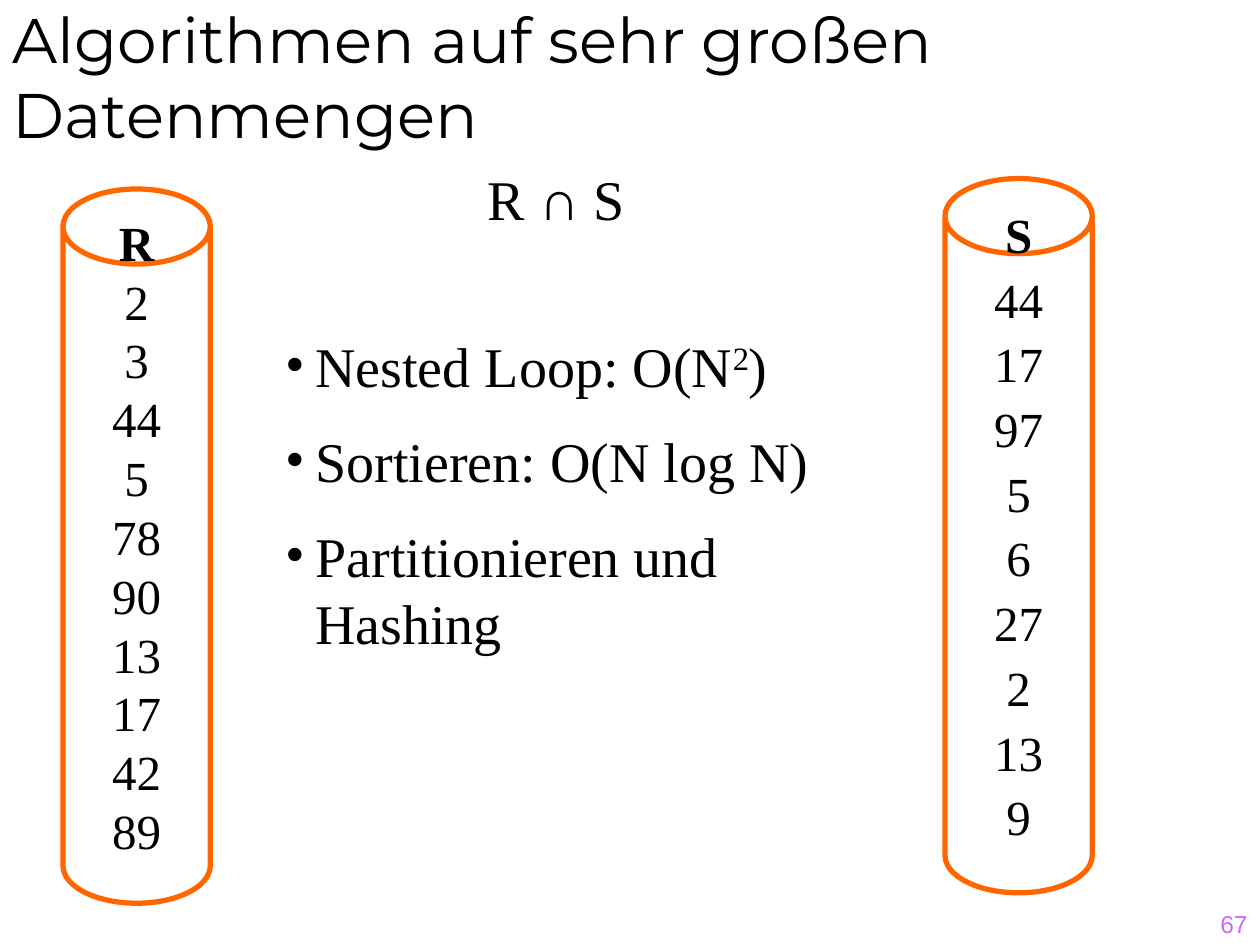
from lxml.etree import SubElement
from pptx import Presentation
from pptx.dml.color import RGBColor
from pptx.enum.shapes import MSO_SHAPE
from pptx.enum.text import MSO_ANCHOR, MSO_AUTO_SIZE, PP_ALIGN
from pptx.oxml.ns import qn
from pptx.util import Cm, Pt

# Content
TITLE = "Algorithmen auf sehr großen Datenmengen"
OPERATION = "R ∩ S"
PAGE_NUMBER = "67"
# name, values, left, top, line spacing, room kept free below the values
RELATIONS = [
    ("R", [2, 3, 44, 5, 78, 90, 13, 17, 42, 89], 1.27, 3.81, 1.0, 1.3),
    ("S", [44, 17, 97, 5, 6, 27, 2, 13, 9], 19.05, 3.6, 1.1, 1.43),
]
# Each method is a list of (text, is superscript)
METHODS = [
    [("Nested Loop: O(N", False), ("2", True), (")", False)],
    [("Sortieren: O(N log N)", False)],
    [("Partitionieren und Hashing", False)],
]
SERIF = "Times New Roman"
BLACK, WHITE, ORANGE, VIOLET = "000000", "FFFFFF", "FF6600", "CC66FF"


def color(hex_code):
    return RGBColor.from_string(hex_code)


def add_text(paragraph, text, font=SERIF, size=32, hex_code=BLACK,
             bold=False, superscript=False, align=None):
    if align is not None:
        paragraph.alignment = align
    run = paragraph.add_run()
    run.text = text
    run.font.name = font
    run.font.size = Pt(size)
    run.font.bold = bold
    run.font.color.rgb = color(hex_code)
    if superscript:
        run.font._element.set("baseline", "30000")


def add_bullet(paragraph, indent):
    properties = paragraph._p.get_or_add_pPr()
    properties.set("marL", str(indent))
    properties.set("indent", str(-indent))
    SubElement(properties, qn("a:buFont"), typeface=SERIF)
    SubElement(properties, qn("a:buChar"), char="•")


def next_paragraph(frame, index):
    return frame.add_paragraph() if index else frame.paragraphs[0]


def add_relation(slide, name, values, left, top, spacing, room_below):
    cylinder = slide.shapes.add_shape(
        MSO_SHAPE.CAN, Cm(left), Cm(top), Cm(2.97), Cm(14.4))
    cylinder.adjustments[0] = 0.51
    cylinder.shadow.inherit = False
    cylinder.fill.solid()
    cylinder.fill.fore_color.rgb = color(WHITE)
    cylinder.line.color.rgb = color(ORANGE)
    cylinder.line.width = Pt(3)
    frame = cylinder.text_frame
    frame.word_wrap = False
    frame.vertical_anchor = MSO_ANCHOR.MIDDLE
    frame.margin_bottom = Cm(room_below)
    for index, entry in enumerate([name, *values]):
        paragraph = next_paragraph(frame, index)
        paragraph.line_spacing = spacing
        add_text(paragraph, str(entry), size=28, bold=index == 0,
                 align=PP_ALIGN.CENTER)


def main():
    presentation = Presentation()
    presentation.slide_width, presentation.slide_height = Cm(25.4), Cm(19.05)
    slide = presentation.slides.add_slide(presentation.slide_layouts[5])

    # Title
    title = slide.shapes.title
    title.left, title.top = Cm(0), Cm(0)
    title.width, title.height = Cm(25.4), Cm(3.18)
    title.text_frame.auto_size = MSO_AUTO_SIZE.NONE
    title.text_frame.vertical_anchor = MSO_ANCHOR.BOTTOM
    add_text(title.text_frame.paragraphs[0], TITLE, font="Montserrat",
             size=36, align=PP_ALIGN.LEFT)

    # Relations
    for relation in RELATIONS:
        add_relation(slide, *relation)

    # Operation
    operation = slide.shapes.add_textbox(Cm(9.55), Cm(3.2), Cm(3.33), Cm(1.6))
    operation.text_frame.word_wrap = False
    add_text(operation.text_frame.paragraphs[0], OPERATION,
             align=PP_ALIGN.CENTER)

    # Methods
    methods = slide.shapes.add_textbox(Cm(5.51), Cm(6.55), Cm(13.13), Cm(7.7))
    methods.text_frame.word_wrap = True
    for index, parts in enumerate(METHODS):
        paragraph = next_paragraph(methods.text_frame, index)
        paragraph.space_before = Pt(16)
        add_bullet(paragraph, Cm(0.6))
        for text, superscript in parts:
            add_text(paragraph, text, superscript=superscript)

    # Page number
    page = slide.shapes.add_textbox(Cm(20.12), Cm(17.78), Cm(5.28), Cm(1.27))
    page.text_frame.word_wrap = True
    page.text_frame.vertical_anchor = MSO_ANCHOR.BOTTOM
    add_text(page.text_frame.paragraphs[0], PAGE_NUMBER, font="Arial",
             size=14, hex_code=VIOLET, align=PP_ALIGN.RIGHT)

    presentation.save("out.pptx")


if __name__ == "__main__":
    main()
